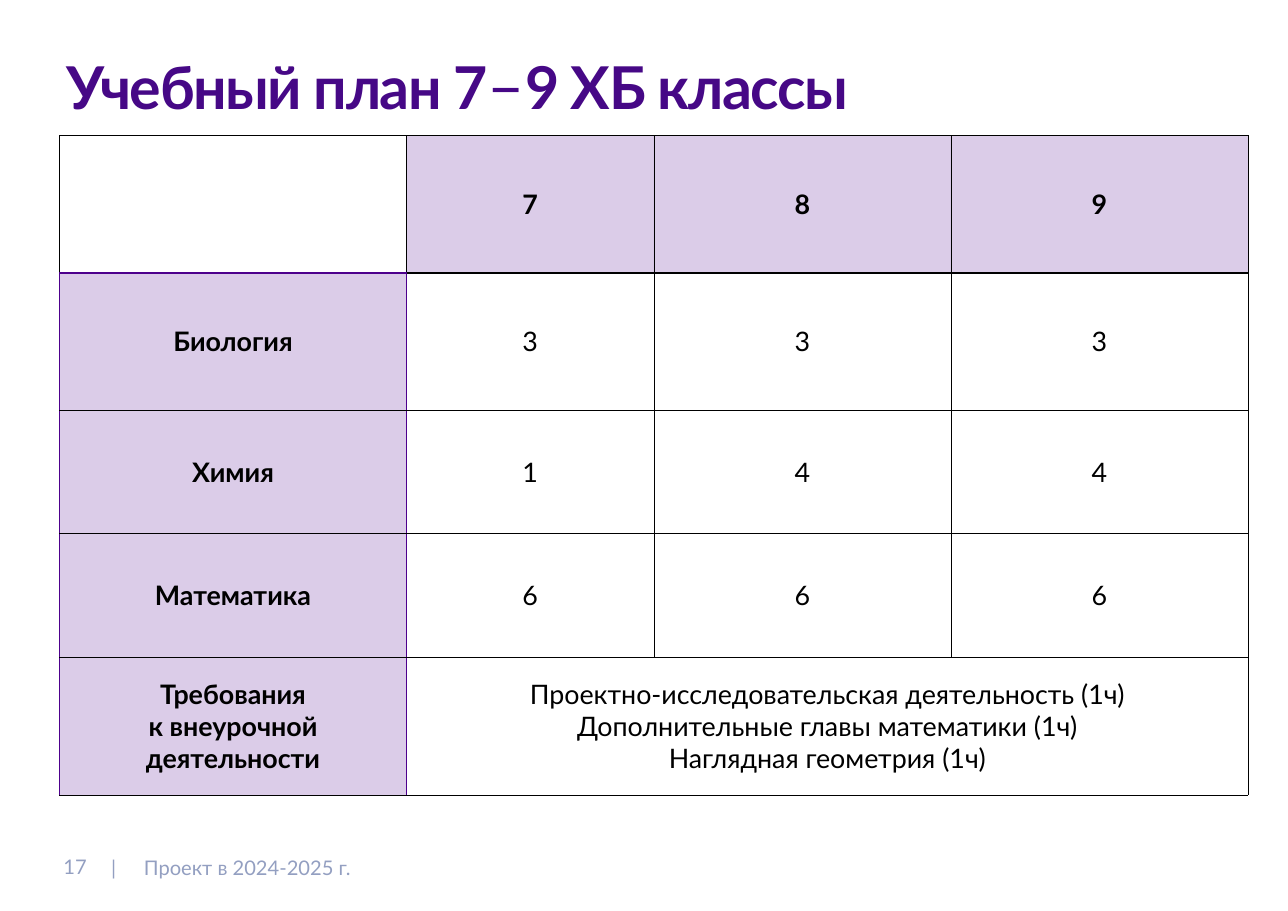
from dataclasses import dataclass
from lxml.etree import SubElement
from pptx import Presentation
from pptx.dml.color import RGBColor
from pptx.enum.text import MSO_ANCHOR, MSO_AUTO_SIZE, PP_ALIGN
from pptx.oxml import parse_xml
from pptx.oxml.ns import nsdecls, qn
from pptx.util import Inches, Pt


@dataclass
class Theme:
    font: str = "Lato"
    title: str = "460886"
    accent: str = "4D008C"
    ink: str = "000000"
    muted: str = "939FC1"
    title_size: int = 88
    dash_size: int = 96
    table_size: int = 40
    footer_size: int = 30
    inset: float = 0.06


theme = Theme()


def add_span(para, text, size, color, bold=False):
    span = para.add_run()
    span.text = text
    span.font.name = theme.font
    span.font.size = Pt(size)
    span.font.bold = bold
    span.font.color.rgb = RGBColor.from_string(color)
    return span


def set_margins(target):
    target.margin_left = target.margin_right = Inches(theme.inset)
    target.margin_top = target.margin_bottom = Inches(theme.inset)


deck = Presentation()
deck.slide_width, deck.slide_height = Inches(26.67), Inches(18.86)
page = deck.slides.add_slide(deck.slide_layouts[5])

title = page.shapes.title
title.left, title.top = Inches(1.32), Inches(1.18)
title.width, title.height = Inches(24.03), Inches(1.92)
frame = title.text_frame
set_margins(frame)
frame.word_wrap = True
frame.auto_size = MSO_AUTO_SIZE.NONE
frame.vertical_anchor = MSO_ANCHOR.TOP
para = frame.paragraphs[0]
para.alignment = PP_ALIGN.LEFT
para.line_spacing = 0.8
for text, size, bold in [
    ("Учебный план 7", theme.title_size, True),
    ("–", theme.dash_size, False),
    ("9 ХБ классы", theme.title_size, True),
]:
    span = add_span(para, text, size, theme.title, bold)
    span.font._element.set("spc", "-210")

column_widths = [7.19, 5.12, 6.15, 6.15]
row_heights = [2.84, 2.84, 2.56, 2.56, 2.85]
rows = [
    [[], ["7"], ["8"], ["9"]],
    [["Биология"], ["3"], ["3"], ["3"]],
    [["Химия"], ["1"], ["4"], ["4"]],
    [["Математика"], ["6"], ["6"], ["6"]],
    [
        ["Требования", "к внеурочной деятельности"],
        [
            "Проектно-исследовательская деятельность (1ч)",
            "Дополнительные главы математики (1ч)",
            "Наглядная геометрия (1ч)",
        ],
        [],
        [],
    ],
]
table = page.shapes.add_table(
    len(rows), len(column_widths), Inches(1.23), Inches(2.81),
    Inches(sum(column_widths)), Inches(sum(row_heights)),
).table
table.horz_banding = False
for column, width in zip(table.columns, column_widths):
    column.width = Inches(width)
for row, height in zip(table.rows, row_heights):
    row.height = Inches(height)
table.cell(4, 1).merge(table.cell(4, 3))

for r, row in enumerate(rows):
    for c, lines in enumerate(row):
        cell = table.cell(r, c)
        set_margins(cell)
        cell.vertical_anchor = MSO_ANCHOR.MIDDLE
        heading = (r == 0) != (c == 0)
        for i, line in enumerate(lines):
            para = cell.text_frame.paragraphs[0] if i == 0 else cell.text_frame.add_paragraph()
            para.alignment = PP_ALIGN.CENTER
            add_span(para, line, theme.table_size, theme.ink, heading)
        if heading:
            cell.fill.solid()
            cell.fill.fore_color.rgb = RGBColor.from_string(theme.accent)
        else:
            cell.fill.background()
        properties = cell._tc.get_or_add_tcPr()
        if heading:
            tint = properties.find(qn("a:solidFill"))[0]
            SubElement(tint, qn("a:alpha")).set("val", "20000")

        thin, purple, thick = (theme.ink, 1), (theme.accent, 1), (theme.accent, 3)
        borders = {"L": thin, "R": thin, "T": thin, "B": thin}
        if r == 0:
            borders["B"] = thick if c == 0 else (theme.ink, 3)
        elif c == 0:
            borders["L"] = borders["R"] = purple
            if r == 1:
                borders["T"] = thick
        elif c == 1:
            borders["L"] = purple
        for position, (side, (color, weight)) in enumerate(borders.items()):
            properties.insert(position, parse_xml(
                f'<a:ln{side} {nsdecls("a")} w="{Pt(weight)}"><a:solidFill>'
                f'<a:srgbClr val="{color}"/></a:solidFill></a:ln{side}>'
            ))

for text, left, top, width, align, anchor, wrap in [
    ("17", 1.2, 17.63, 0.71, PP_ALIGN.CENTER, MSO_ANCHOR.BOTTOM, False),
    ("|", 2.22, 17.64, 0.27, PP_ALIGN.CENTER, MSO_ANCHOR.MIDDLE, False),
    ("Проект в 2024-2025 г.", 2.92, 17.64, 19.03, PP_ALIGN.LEFT, MSO_ANCHOR.MIDDLE, True),
]:
    box = page.shapes.add_textbox(Inches(left), Inches(top), Inches(width), Inches(0.62))
    frame = box.text_frame
    set_margins(frame)
    frame.word_wrap = wrap
    frame.auto_size = MSO_AUTO_SIZE.SHAPE_TO_FIT_TEXT
    frame.vertical_anchor = anchor
    para = frame.paragraphs[0]
    para.alignment = align
    add_span(para, text, theme.footer_size, theme.muted)

deck.save("out.pptx")
